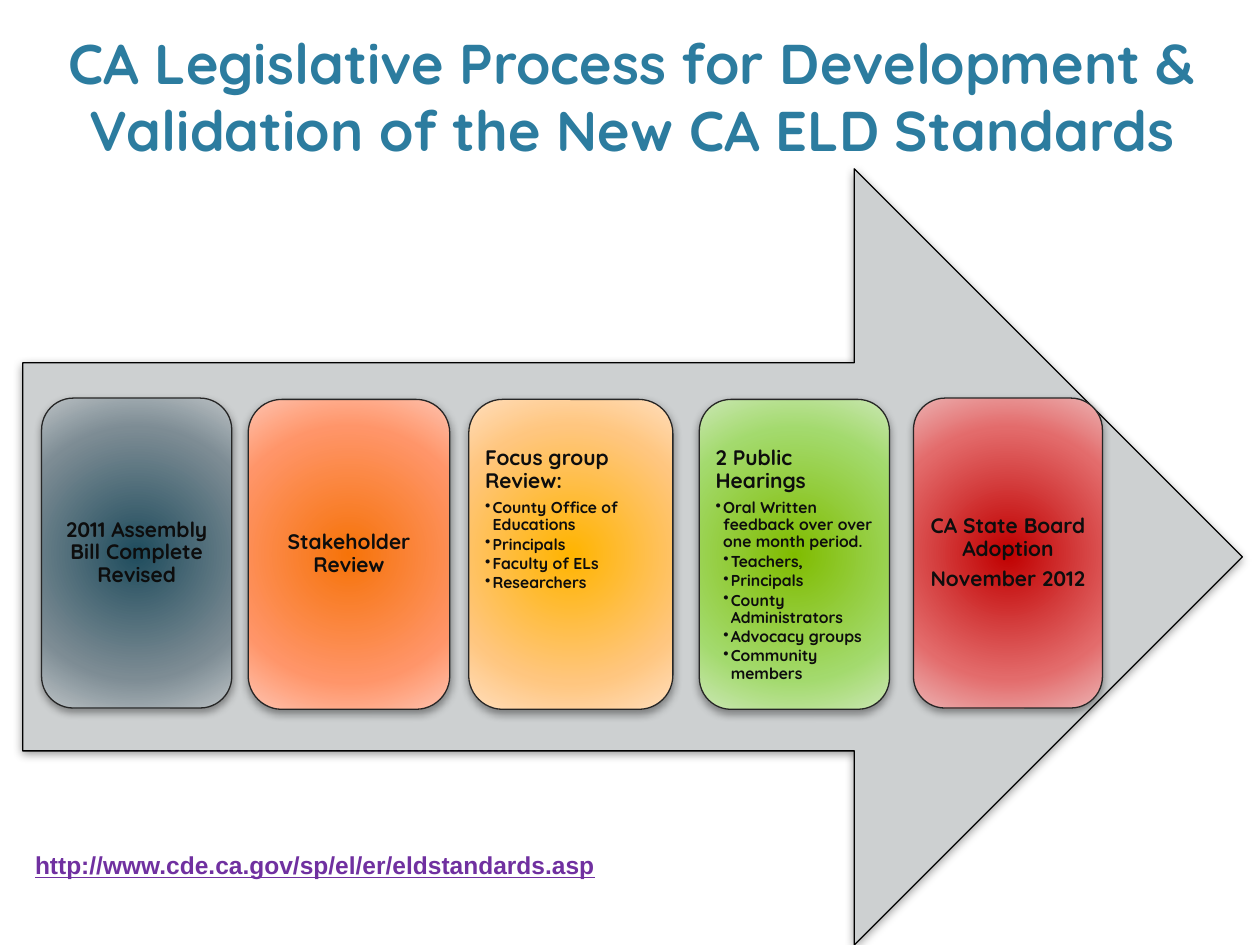
"""Build a slide showing five legislative steps along a broad arrow."""
from dataclasses import dataclass

from lxml import etree
from pptx import Presentation
from pptx.dml.color import RGBColor
from pptx.enum.shapes import MSO_SHAPE
from pptx.enum.text import MSO_ANCHOR, PP_ALIGN
from pptx.oxml import parse_xml
from pptx.oxml.ns import nsdecls, qn
from pptx.util import Inches, Pt

ARROW, CARD, RECT = MSO_SHAPE.RIGHT_ARROW, MSO_SHAPE.ROUNDED_RECTANGLE, MSO_SHAPE.RECTANGLE
TOP, MIDDLE, BOTTOM = MSO_ANCHOR.TOP, MSO_ANCHOR.MIDDLE, MSO_ANCHOR.BOTTOM
LEFT, CENTER = PP_ALIGN.LEFT, PP_ALIGN.CENTER


@dataclass(frozen=True)
class Theme:
    heading_font: str = "Quicksand"
    address_font: str = "Arial"
    title: str = "2C7C9F"
    ink: str = "0D0D0D"
    address: str = "7030A0"
    paper: str = "FFFFFF"
    arrow: str = "CDD0D1"
    arrow_edge: str = "000000"
    card_edge: str = "262626"
    title_size: int = 32
    address_size: int = 14
    level_sizes: tuple = (12, 9, 9)


THEME = Theme()
WIDTH, HEIGHT = 10, 7.5
MARGIN, BAND = 0.18, 9.68
TITLE_TOP, TITLE_HEIGHT = 0.12, 1.22
ARROW_TOP = TITLE_TOP + TITLE_HEIGHT
CARD_HEIGHT, CARD_INSET = 2.46, 0.08
TEXT_INSET, LIST_TOP, INDENT = 0.05, 0.3, 0.06

TITLE = "CA Legislative Process for Development & Validation of the New CA ELD Standards"
ADDRESS = "http://www.cde.ca.gov/sp/el/er/eldstandards.asp"
STEPS = [
    {"place": (0.33, 3.16, 1.51), "glow": ("1F4C5D", "7D8C94", "BCC2C5"),
     "lines": [(0, "2011 Assembly Bill Complete Revised")]},
    {"place": (1.97, 3.17, 1.6), "glow": ("F67309", "FF9569", "FEC3B0"),
     "lines": [(0, "Stakeholder Review")]},
    {"place": (3.72, 3.17, 1.62), "glow": ("FFB400", "FFC67F", "FFDEBD"),
     "lines": [(0, "Focus group Review:"), (1, "County Office of Educations"),
               (1, "Principals"), (1, "Faculty of ELs"), (1, "Researchers")]},
    {"place": (5.55, 3.17, 1.51), "glow": ("80BC00", "A3DA6D", "CBE7B4"),
     "lines": [(0, "2 Public Hearings"),
               (1, "Oral Written feedback over over one month period."),
               (2, "Teachers,"), (2, "Principals"), (2, "County Administrators"),
               (2, "Advocacy groups"), (2, "Community members")]},
    {"place": (7.25, 3.16, 1.5), "glow": ("C00000", "E36B6B", "ECB3B3"),
     "lines": [(0, "CA State Board Adoption"), (0, "November 2012")]},
]
GLOW_STOPS = (0, 69000, 100000)
SPACE_AFTER = (4.2, 1.35, 1.35)


def apply(target, formats):
    for attribute, value in formats.items():
        setattr(target, attribute, value)


def write(paragraph, text, size, color, font=THEME.heading_font, underline=None):
    run = paragraph.add_run()
    run.text = text
    apply(run.font, {"name": font, "size": Pt(size), "bold": True, "underline": underline})
    run.font.color.rgb = RGBColor.from_string(color)


def add_block(slide, kind, box, fill, edge=None):
    block = slide.shapes.add_shape(kind, *map(Inches, box))
    block.shadow.inherit = False
    block.fill.solid()
    block.fill.fore_color.rgb = RGBColor.from_string(fill)
    if edge is None:
        block.line.fill.background()
    else:
        block.line.color.rgb = RGBColor.from_string(edge)
        block.line.width = Pt(0.75)
    return block


def cast_shadow(block):
    effects = block._element.spPr.find(qn("a:effectLst"))
    effects.append(parse_xml(
        f'<a:outerShdw {nsdecls("a")} blurRad="{Pt(5)}" dist="{Pt(2)}" dir="5400000" '
        'rotWithShape="0"><a:srgbClr val="000000"><a:alpha val="40000"/></a:srgbClr>'
        '</a:outerShdw>'))


def glow_from_centre(block, colors):
    stops = "".join(f'<a:gs pos="{position}"><a:srgbClr val="{color}"/></a:gs>'
                    for position, color in zip(GLOW_STOPS, colors))
    properties = block._element.spPr
    properties.replace(properties.find(qn("a:solidFill")), parse_xml(
        f'<a:gradFill {nsdecls("a")} rotWithShape="1"><a:gsLst>{stops}</a:gsLst>'
        '<a:path path="circle"><a:fillToRect l="100000" t="100000" r="100000" b="100000"/>'
        '</a:path></a:gradFill>'))


def add_bullet(paragraph, level):
    properties = paragraph._p.get_or_add_pPr()
    properties.set("marL", str(Inches(INDENT * level)))
    properties.set("indent", str(-Inches(INDENT)))
    etree.SubElement(properties, qn("a:buChar")).set("char", "•")


def add_text(slide, box, formats):
    frame = slide.shapes.add_textbox(*map(Inches, box)).text_frame
    apply(frame, {"word_wrap": True, **formats})
    return frame


def add_step(slide, step):
    left, top, width = step["place"]
    card = add_block(slide, CARD, (left, top, width, CARD_HEIGHT), THEME.paper, THEME.card_edge)
    glow_from_centre(card, step["glow"])
    cast_shadow(card)

    listed = any(level for level, _ in step["lines"])
    inset = Inches(TEXT_INSET)
    frame = add_text(
        slide,
        (left + CARD_INSET, top + CARD_INSET, width - 2 * CARD_INSET, CARD_HEIGHT - 2 * CARD_INSET),
        {"vertical_anchor": TOP if listed else MIDDLE, "margin_left": inset,
         "margin_right": inset, "margin_bottom": inset,
         "margin_top": Inches(LIST_TOP) if listed else inset})
    for index, (level, text) in enumerate(step["lines"]):
        paragraph = frame.add_paragraph() if index else frame.paragraphs[0]
        apply(paragraph, {"level": level, "alignment": LEFT if listed else CENTER,
                          "line_spacing": 0.9, "space_after": Pt(SPACE_AFTER[level])})
        if level:
            add_bullet(paragraph, level)
        write(paragraph, text, THEME.level_sizes[level], THEME.ink)


def main():
    deck = Presentation()
    apply(deck, {"slide_width": Inches(WIDTH), "slide_height": Inches(HEIGHT)})
    slide = deck.slides.add_slide(deck.slide_layouts[6])

    title = add_text(slide, (MARGIN, TITLE_TOP, BAND, TITLE_HEIGHT),
                     {"vertical_anchor": BOTTOM}).paragraphs[0]
    title.alignment = CENTER
    write(title, TITLE, THEME.title_size, THEME.title)

    cast_shadow(add_block(slide, ARROW, (MARGIN, ARROW_TOP, BAND, HEIGHT - ARROW_TOP),
                          THEME.arrow, THEME.arrow_edge))
    for step in STEPS:
        add_step(slide, step)

    address = add_block(slide, RECT, (MARGIN, 6.7, 5.04, 0.57), THEME.paper).text_frame
    apply(address, {"word_wrap": True, "vertical_anchor": TOP})
    address.paragraphs[0].alignment = LEFT
    write(address.paragraphs[0], ADDRESS, THEME.address_size, THEME.address,
          THEME.address_font, True)
    deck.save("out.pptx")


if __name__ == "__main__":
    main()
